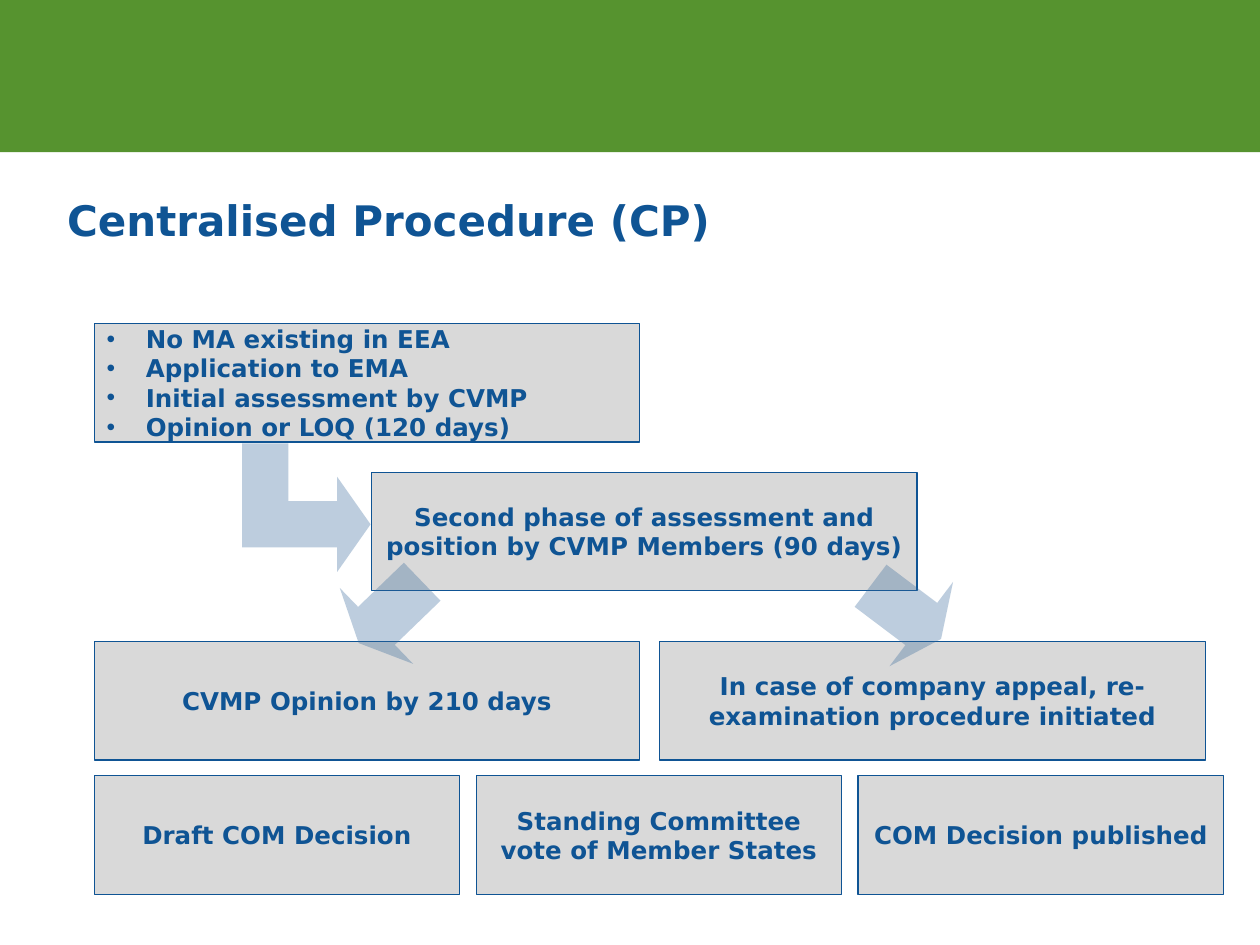
from pptx import Presentation
from pptx.dml.color import RGBColor
from pptx.enum.shapes import MSO_SHAPE as SHAPE
from pptx.enum.text import MSO_ANCHOR as ANCHOR, PP_ALIGN as ALIGN
from pptx.oxml.ns import qn
from pptx.util import Cm, Pt
from lxml.etree import SubElement

GREEN = RGBColor(0x56, 0x93, 0x2F)
BLUE = RGBColor(0x0F, 0x54, 0x94)
GREY = RGBColor(0xD9, 0xD9, 0xD9)
STEEL = RGBColor(0x33, 0x66, 0x99)

TITLE = "Centralised Procedure (CP)"
START = ["No MA existing in EEA", "Application to EMA",
         "Initial assessment by CVMP", "Opinion or LOQ (120 days)"]
SECOND = ["Second phase of assessment and", "position by CVMP Members (90 days)"]
OUTCOMES = ["CVMP Opinion by 210 days",
            "In case of company appeal, re-examination procedure initiated"]
DECISIONS = ["Draft COM Decision", "Standing Committee vote of Member States",
             "COM Decision published"]
ARROWS = [
    (SHAPE.RIGHT_ARROW, (6.98, 11.28, 1.78, 2.13), 136, (0.5, 0.28)),
    (SHAPE.RIGHT_ARROW, (17.37, 11.28, 1.78, 2.13), 37, (0.5, 0.28)),
    (SHAPE.BENT_UP_ARROW, (4.88, 8.94, 2.59, 2.59), 90, (0.36, 0.37, 0.26)),
]

LEFT, BOX_H, WIDE, NARROW = 1.9, 2.39, 11, 7.37
WIDE_STEP, NARROW_STEP = 11.4, 7.7
FONT = {"name": "DejaVu Sans", "bold": True}


def style_font(font, size):
    for key, value in {**FONT, "size": Pt(size)}.items():
        setattr(font, key, value)
    font.color.rgb = BLUE


def add_shape(s, kind, box, fill):
    sp = s.shapes.add_shape(kind, *map(Cm, box))
    sp.shadow.inherit = False
    sp.fill.solid()
    sp.fill.fore_color.rgb = fill
    sp.line.fill.background()
    return sp


def add_box(s, left, top, width, lines, bullets=False):
    sp = add_shape(s, SHAPE.RECTANGLE, (left, top, width, BOX_H), GREY)
    sp.line.color.rgb = BLUE
    sp.line.width = Pt(0.75)
    tf = sp.text_frame
    tf.word_wrap = True
    tf.vertical_anchor = ANCHOR.MIDDLE
    tf.text = "\n".join(lines)
    for p in tf.paragraphs:
        p.alignment = ALIGN.LEFT if bullets else ALIGN.CENTER
        if bullets:
            pPr = p._p.get_or_add_pPr()
            pPr.set("marL", str(Cm(0.79)))
            pPr.set("indent", str(-Cm(0.79)))
            SubElement(pPr, qn("a:buFont")).set("typeface", "Arial")
            SubElement(pPr, qn("a:buChar")).set("char", "•")
        for r in p.runs:
            style_font(r.font, 14)


def add_arrow(s, kind, box, rotation, adjustments):
    sp = add_shape(s, kind, box, STEEL)
    sp.rotation = rotation
    for i, value in enumerate(adjustments):
        sp.adjustments[i] = value
    color = sp._element.spPr.find(qn("a:solidFill"))[0]
    SubElement(color, qn("a:alpha")).set("val", "32000")


def add_title(s):
    title = s.shapes.title
    box = {"left": 1.1, "top": 3.53, "width": 22.86, "height": 1.8}
    for key, value in box.items():
        setattr(title, key, Cm(value))
    tf = title.text_frame
    tf.text = TITLE
    tf.vertical_anchor = ANCHOR.MIDDLE
    p = tf.paragraphs[0]
    p.alignment = ALIGN.LEFT
    style_font(p.runs[0].font, 24)


def main():
    prs = Presentation()
    prs.slide_width, prs.slide_height = Cm(25.4), Cm(19.05)
    s = prs.slides.add_slide(prs.slide_layouts[5])
    add_shape(s, SHAPE.RECTANGLE, (0, -0.08, 25.4, 3.15), GREEN)
    add_title(s)
    add_box(s, LEFT, 6.52, WIDE, START, bullets=True)
    add_box(s, 7.49, 9.52, WIDE, SECOND)
    for i, text in enumerate(OUTCOMES):
        add_box(s, LEFT + i * WIDE_STEP, 12.93, WIDE, [text])
    for i, text in enumerate(DECISIONS):
        add_box(s, LEFT + i * NARROW_STEP, 15.64, NARROW, [text])
    for arrow in ARROWS:
        add_arrow(s, *arrow)
    prs.save("out.pptx")


if __name__ == "__main__":
    main()
